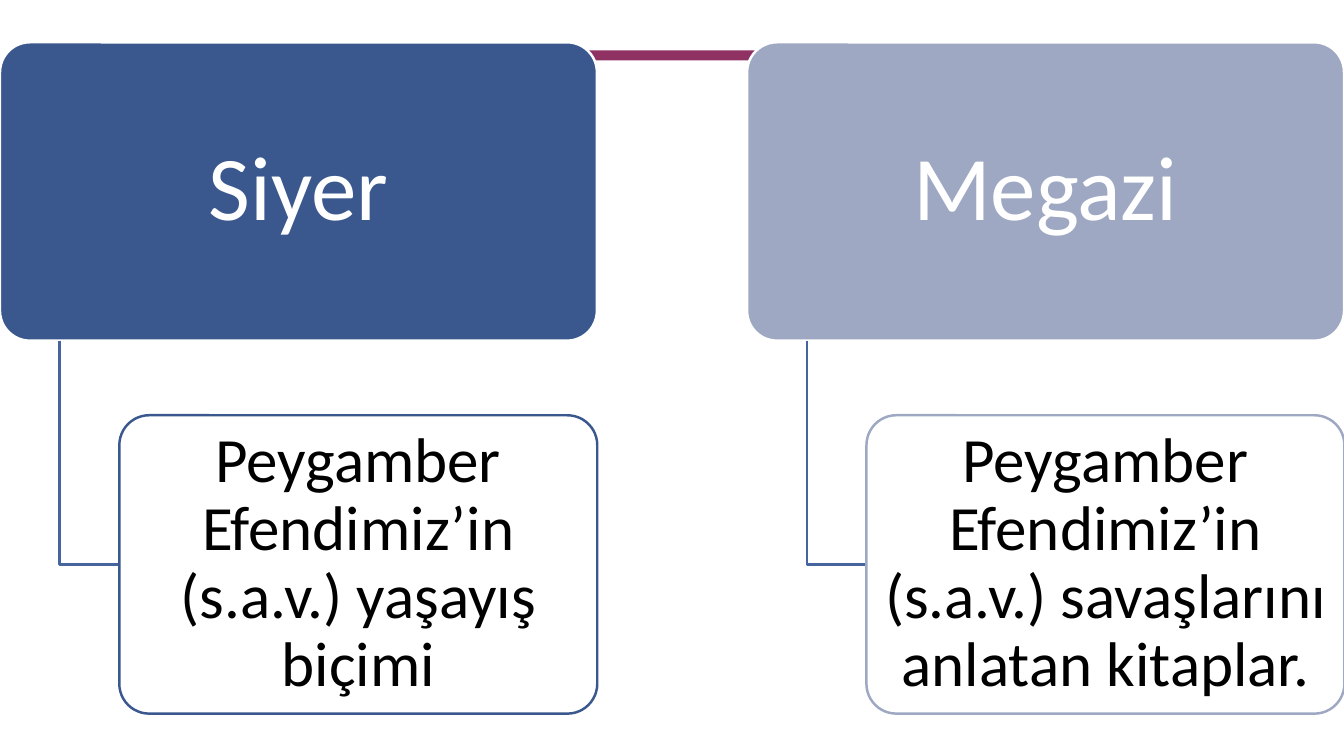
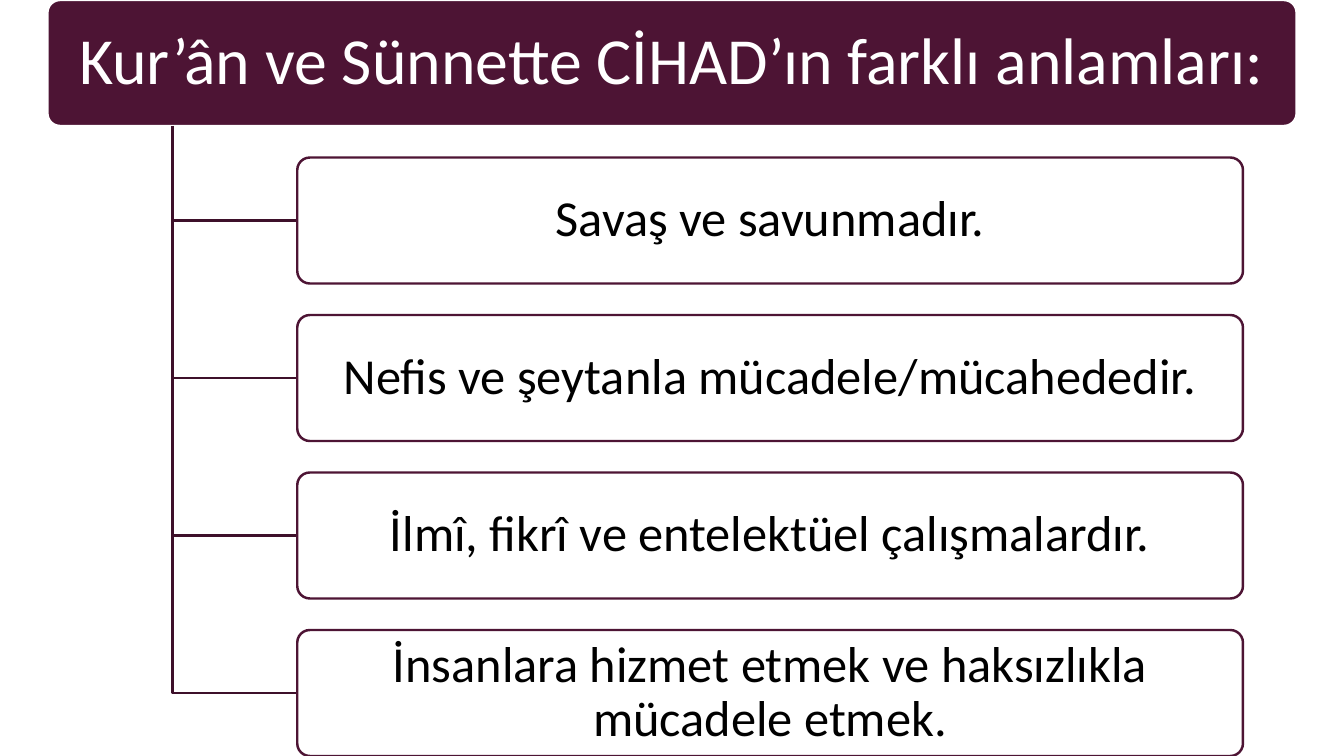
from pptx import Presentation
from pptx.dml.color import RGBColor
from pptx.enum import shapes, text
from pptx.oxml import parse_xml
from pptx.oxml.ns import nsdecls, qn
from pptx.util import Inches, Pt

HUES = {
    "white": "FFFFFF", "black": "000000", "band": "903163",
    "blue": "3A588E", "pale": "9EA8C2", "link": "46649E",
    "plum": "4D1434", "stem": "3E102A",
}
FONT = "Calibri"
STROKE = Pt(1.75)
TITLE_ONLY, BLANK = 5, 6


def hue(name):
    return RGBColor.from_string(HUES[name])


def write(shape, words, size, color):
    """Centre the words, with margins that grow with the font size."""
    frame = shape.text_frame
    frame.word_wrap = True
    frame.auto_size = text.MSO_AUTO_SIZE.NONE
    frame.vertical_anchor = text.MSO_ANCHOR.MIDDLE
    frame.margin_left = frame.margin_right = Inches(size / 500)
    frame.margin_top = frame.margin_bottom = Inches(size / 750)
    para = frame.paragraphs[0]
    para.alignment = text.PP_ALIGN.CENTER
    para.line_spacing = 0.9
    run = para.add_run()
    run.text = words
    run.font.name = FONT
    run.font.size = Pt(size)
    run.font.color.rgb = hue(color)


def add_box(slide, area, fill, line, alpha=100):
    """Add a rounded box; alpha is the opacity of its fill in percent."""
    box = slide.shapes.add_shape(
        shapes.MSO_SHAPE.ROUNDED_RECTANGLE, *map(Inches, area))
    box.adjustments[0] = 0.1
    box.shadow.inherit = False
    box.fill.solid()
    box.fill.fore_color.rgb = hue(fill)
    if alpha < 100:
        tint = box.element.spPr.find(qn("a:solidFill")).find(qn("a:srgbClr"))
        tint.append(parse_xml(
            f'<a:alpha {nsdecls("a")} val="{alpha * 1000}"/>'))
    box.line.color.rgb = hue(line)
    box.line.width = STROKE
    return box


def add_elbow(slide, left, top, right, bottom, color):
    pen = slide.shapes.build_freeform(Inches(left), Inches(top))
    pen.add_line_segments(
        [(Inches(left), Inches(bottom)), (Inches(right), Inches(bottom))],
        close=False)
    elbow = pen.convert_to_shape()
    elbow.shadow.inherit = False
    elbow.fill.background()
    elbow.line.color.rgb = hue(color)
    elbow.line.width = STROKE


def add_band(slide):
    band = slide.shapes.add_shape(
        shapes.MSO_SHAPE.RECTANGLE, *map(Inches, (4.64, 0.5, 4.05, 0.1)))
    band.shadow.inherit = False
    band.fill.solid()
    band.fill.fore_color.rgb = hue("band")
    band.line.fill.background()


def add_title(slide, area, words, size):
    """Lay the title over the head box, in front of it."""
    title = slide.shapes.title
    title.left, title.top, title.width, title.height = map(Inches, area)
    write(title, words, size, "white")
    slide.shapes.element.append(title.element)


def add_tree(slide, area, color, link, width, size, items):
    """Add a head box with items hung below it; return the head box."""
    left, top, wide, high = area
    head = add_box(slide, area, color, "white")
    stem, edge = left + wide * 0.1, left + wide * 0.2
    for row, words in enumerate(items, 1):
        y = top + row * high * 1.25
        add_elbow(slide, stem, top + high, edge, y + high / 2, link)
        leaf = add_box(slide, (edge, y, width, high), "white", color, 90)
        write(leaf, words, size, "black")
    return head


def add_books(deck):
    slide = deck.slides.add_slide(deck.slide_layouts[BLANK])
    add_band(slide)
    trees = [
        (0, "blue", "Siyer",
         "Peygamber Efendimiz’in (s.a.v.) yaşayış biçimi"),
        (7.41, "pale", "Megazi",
         "Peygamber Efendimiz’in (s.a.v.) savaşlarını anlatan kitaplar."),
    ]
    for left, color, name, words in trees:
        head = add_tree(slide, (left, 0.42, 5.92, 2.96), color, "link",
                        4.74, 45, [words])
        write(head, name, 65, "white")


def add_senses(deck):
    slide = deck.slides.add_slide(deck.slide_layouts[TITLE_ONLY])
    area = (0.47, 0, 12.39, 1.25)
    add_tree(slide, area, "plum", "stem", 9.38, 36, [
        "Savaş ve savunmadır.",
        "Nefis ve şeytanla mücadele/mücahededir.",
        "İlmî, fikrî ve entelektüel çalışmalardır.",
        "İnsanlara hizmet etmek ve haksızlıkla mücadele etmek.",
    ])
    add_title(slide, area, "Kur’ân ve Sünnette CİHAD’ın farklı anlamları:", 47)


def main():
    deck = Presentation()
    deck.slide_width, deck.slide_height = Inches(13.33), Inches(7.5)
    add_books(deck)
    add_senses(deck)
    deck.save("out.pptx")


if __name__ == "__main__":
    main()
